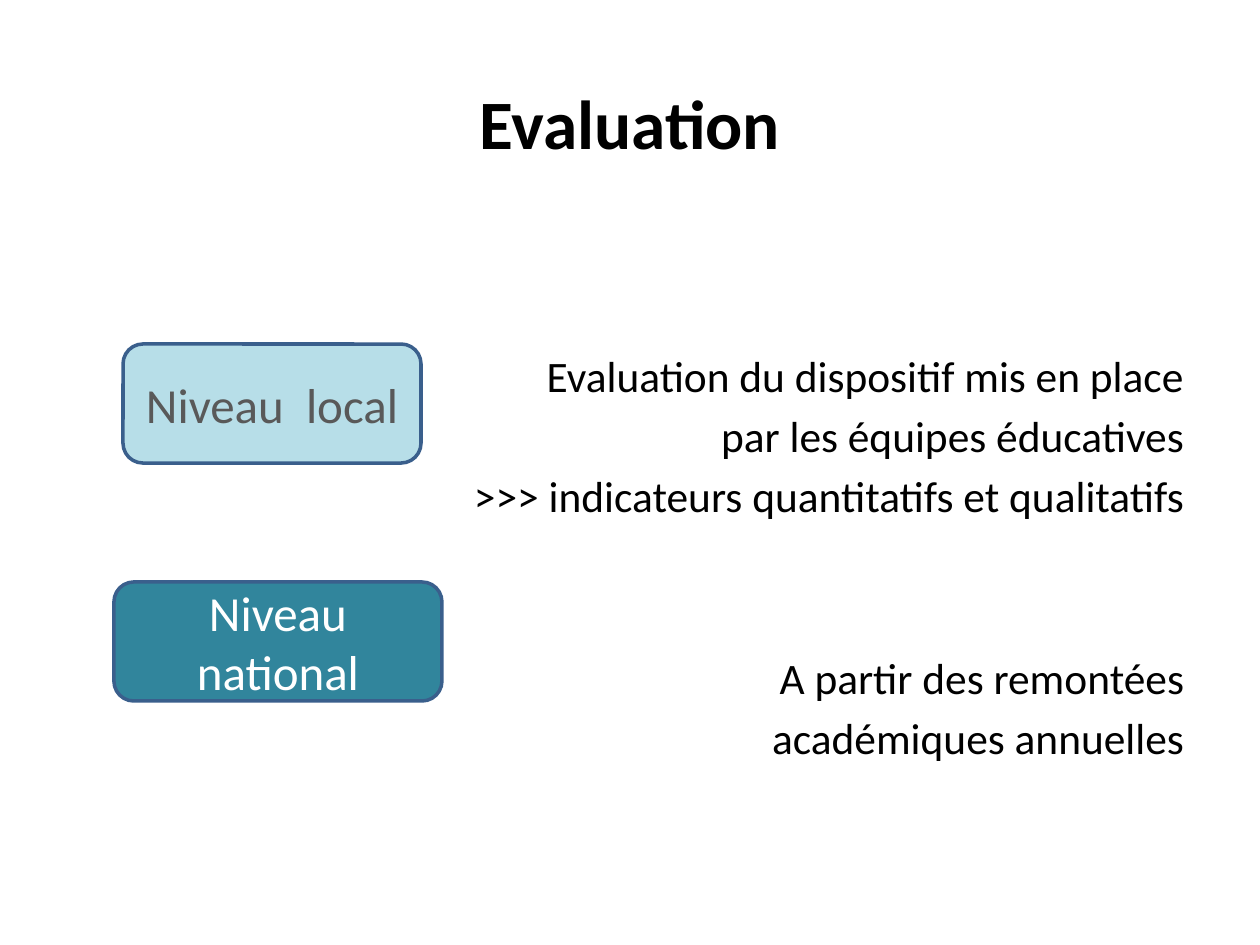
from dataclasses import dataclass

from pptx import Presentation
from pptx.dml.color import RGBColor
from pptx.enum.shapes import MSO_SHAPE
from pptx.enum.text import MSO_ANCHOR, MSO_AUTO_SIZE, PP_ALIGN
from pptx.util import Pt

ROUNDED = MSO_SHAPE.ROUNDED_RECTANGLE
MIDDLE, TOP = MSO_ANCHOR.MIDDLE, MSO_ANCHOR.TOP
CENTER, RIGHT = PP_ALIGN.CENTER, PP_ALIGN.RIGHT
NO_FIT = MSO_AUTO_SIZE.NONE
TITLE_ONLY = 5
PX_PER_INCH = 126


@dataclass(frozen=True)
class Theme:
    font: str = "Calibri"
    text: str = "000000"
    outline: str = "3A5F8C"
    title_pt: float = 39.6
    body_pt: float = 24.8
    level_pt: float = 28
    outline_pt: float = 2
    line_gap_pt: float = 4.6
    group_gap_pt: float = 74.3


@dataclass(frozen=True)
class Box:
    x: int
    y: int
    w: int
    h: int


@dataclass(frozen=True)
class Level:
    label: str
    box: Box
    fill: str
    color: str


THEME = Theme()
TITLE = Box(63, 38, 1134, 157)
BODY = Box(63, 220, 1134, 624)
LEVELS = [
    Level("Niveau  local", Box(123, 344, 298, 119), "B7DEE8", "595959"),
    Level("Niveau national", Box(114, 582, 328, 119), "31859C", "FFFFFF"),
]
COMMENTS = [
    [
        "Evaluation du dispositif mis en place",
        "par les équipes éducatives",
        ">>> indicateurs quantitatifs et qualitatifs",
    ],
    ["A partir des remontées", "académiques annuelles"],
]


def px(n: int) -> int:
    return round(n * 914400 / PX_PER_INCH)


def place(sp, box: Box) -> None:
    sp.left, sp.top = px(box.x), px(box.y)
    sp.width, sp.height = px(box.w), px(box.h)


def format_paragraph(p, size: float, color: str, align, bold: bool = False) -> None:
    p.alignment = align
    for r in p.runs:
        r.font.name = THEME.font
        r.font.size = Pt(size)
        r.font.bold = bold
        r.font.color.rgb = RGBColor.from_string(color)


def add_title(s, text: str) -> None:
    sp = s.shapes.title
    place(sp, TITLE)
    tf = sp.text_frame
    tf.text = text
    tf.auto_size = NO_FIT
    tf.vertical_anchor = MIDDLE
    tf.margin_top = px(16)
    format_paragraph(tf.paragraphs[0], THEME.title_pt, THEME.text, CENTER, True)


def add_comments(s, groups: list[list[str]]) -> None:
    sp = s.shapes.add_textbox(px(BODY.x), px(BODY.y), px(BODY.w), px(BODY.h))
    tf = sp.text_frame
    tf.word_wrap = True
    tf.auto_size = NO_FIT
    tf.vertical_anchor = TOP
    tf.margin_top = px(129)
    tf.text = "\n".join(line for group in groups for line in group)
    starts = {len(groups[0])}
    for i, p in enumerate(tf.paragraphs):
        format_paragraph(p, THEME.body_pt, THEME.text, RIGHT)
        if i:
            p.space_before = Pt(THEME.group_gap_pt if i in starts else THEME.line_gap_pt)


def add_level(s, level: Level) -> None:
    b = level.box
    sp = s.shapes.add_shape(ROUNDED, px(b.x), px(b.y), px(b.w), px(b.h))
    sp.shadow.inherit = False
    sp.fill.solid()
    sp.fill.fore_color.rgb = RGBColor.from_string(level.fill)
    sp.line.color.rgb = RGBColor.from_string(THEME.outline)
    sp.line.width = Pt(THEME.outline_pt)
    tf = sp.text_frame
    tf.text = level.label
    tf.word_wrap = True
    tf.vertical_anchor = MIDDLE
    format_paragraph(tf.paragraphs[0], THEME.level_pt, level.color, CENTER)


def main() -> None:
    prs = Presentation()
    prs.slide_width, prs.slide_height = px(1260), px(945)
    s = prs.slides.add_slide(prs.slide_layouts[TITLE_ONLY])
    add_title(s, "Evaluation")
    add_comments(s, COMMENTS)
    for level in LEVELS:
        add_level(s, level)
    prs.save("out.pptx")


if __name__ == "__main__":
    main()
